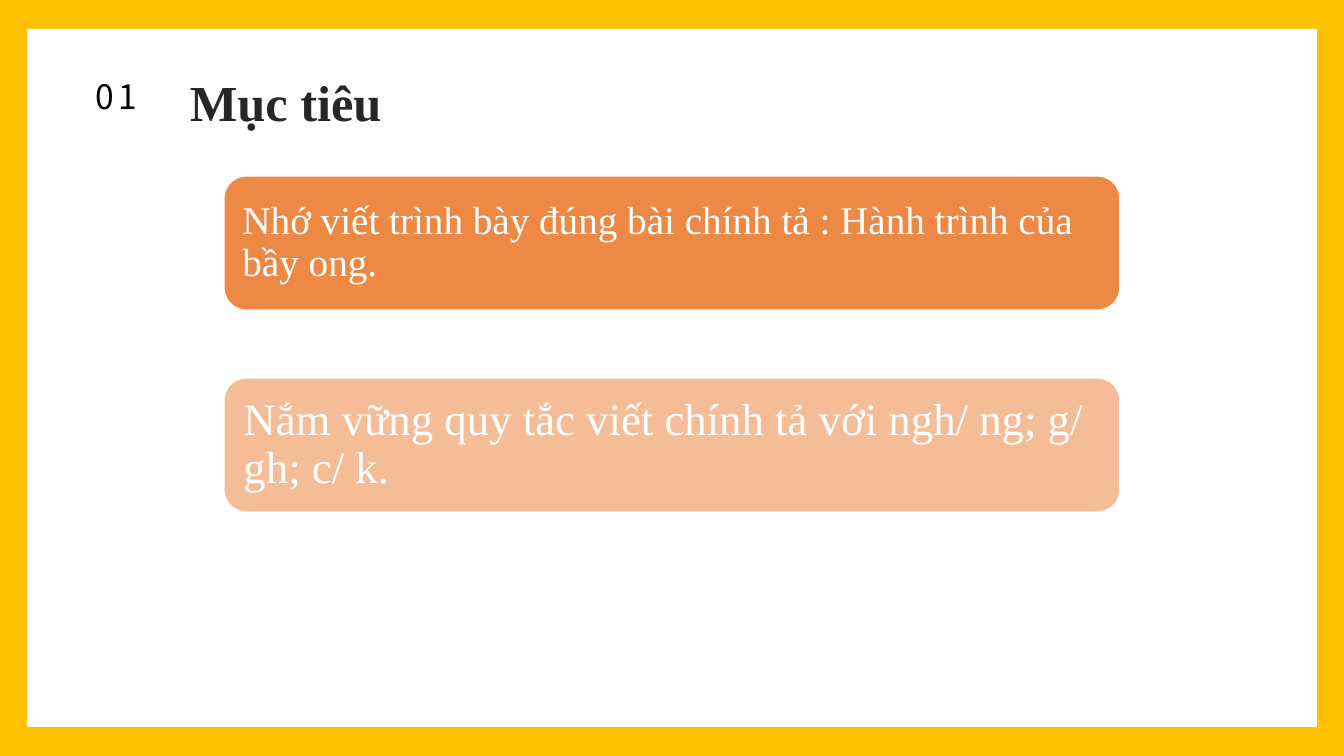
from lxml.etree import SubElement
from pptx import Presentation
from pptx.dml.color import RGBColor
from pptx.enum.shapes import MSO_SHAPE
from pptx.enum.text import MSO_ANCHOR, MSO_AUTO_SIZE, PP_ALIGN
from pptx.oxml.ns import qn
from pptx.util import Emu, Pt

SLIDE_WIDTH, SLIDE_HEIGHT = 1344, 756
SCALE = 12192000 / SLIDE_WIDTH
SERIF = "Times New Roman"
SANS = "Noto Sans CJK SC"
GOALS = [
    ("Nhớ viết trình bày đúng bài chính tả : Hành trình của bầy ong.", 28, 12, 90),
    ("Nắm vững quy tắc viết chính tả với ngh/ ng; g/ gh; c/ k.", 32, 13, 50),
]


def px(length):
    """Turn px into EMU."""
    return Emu(round(length * SCALE))


def color(hex_string):
    """Turn a hex string into a colour."""
    return RGBColor.from_string(hex_string)


def add_box(slide, preset, left, top, width, height, fill):
    """Add a filled shape without line or shadow."""
    shape = slide.shapes.add_shape(preset, px(left), px(top), px(width), px(height))
    shape.shadow.inherit = False
    shape.fill.solid()
    shape.fill.fore_color.rgb = color(fill)
    shape.line.fill.background()
    return shape


def write(shape, text, font_name, size, fill, bold=False, align=PP_ALIGN.LEFT):
    """Write one wrapped paragraph into a shape and return it."""
    shape.text_frame.word_wrap = True
    paragraph = shape.text_frame.paragraphs[0]
    paragraph.text = text
    paragraph.alignment = align
    font = paragraph.font
    font.name, font.size, font.bold = font_name, Pt(size), bold
    font.color.rgb = color(fill)
    return paragraph


def add_label(slide, left, top, width, height, *text_style, **options):
    """Add a text box that grows with its text."""
    label = slide.shapes.add_textbox(px(left), px(top), px(width), px(height))
    label.text_frame.auto_size = MSO_AUTO_SIZE.SHAPE_TO_FIT_TEXT
    return write(label, *text_style, **options)


def add_frame(slide, width, height):
    """Draw the yellow border around the white page."""
    side, edge = 27, 29
    add_box(slide, MSO_SHAPE.RECTANGLE, 0, 0, width, height, "FFC000")
    add_box(slide, MSO_SHAPE.RECTANGLE, side, edge, width - 2 * side, height - 2 * edge, "FFFFFF")


def add_heading(slide, left, top):
    """Place the section number and the title."""
    add_label(slide, left + 131, top, 391, 71, "Mục tiêu", SERIF, 36, "262626", bold=True)
    number = add_label(slide, left, top + 5, 135, 50, "01", SANS, 24, "000000", align=PP_ALIGN.CENTER)
    number.runs[0].font._element.set("spc", "300")


def add_goal(slide, left, top, width, height, text, size, inset, opacity):
    """Draw one rounded card holding a goal."""
    card = add_box(slide, MSO_SHAPE.ROUNDED_RECTANGLE, left, top, width, height, "ED7D31")
    fill_color = card._element.spPr.find(qn("a:solidFill"))[0]
    SubElement(fill_color, qn("a:alpha")).set("val", str(opacity * 1000))
    card.line.color.rgb = color("FFFFFF")
    card.line.width = Pt(1)
    frame = card.text_frame
    frame.vertical_anchor = MSO_ANCHOR.MIDDLE
    frame.margin_left = frame.margin_right = px(inset)
    frame.margin_top = frame.margin_bottom = px(inset)
    write(card, text, SERIF, size, "FFFFFF").line_spacing = 0.9


def add_goals(slide, left, top, width, card_height, pitch):
    """Stack the goal cards at an equal pitch."""
    for index, goal in enumerate(GOALS):
        add_goal(slide, left, top + index * pitch, width, card_height, *goal)


def main():
    """Build and save the slide."""
    presentation = Presentation()
    presentation.slide_width = px(SLIDE_WIDTH)
    presentation.slide_height = px(SLIDE_HEIGHT)
    slide = presentation.slides.add_slide(presentation.slide_layouts[6])
    add_frame(slide, SLIDE_WIDTH, SLIDE_HEIGHT)
    add_heading(slide, 49, 66)
    add_goals(slide, 224, 176, 896, 134, 202)
    presentation.save("out.pptx")


if __name__ == "__main__":
    main()
